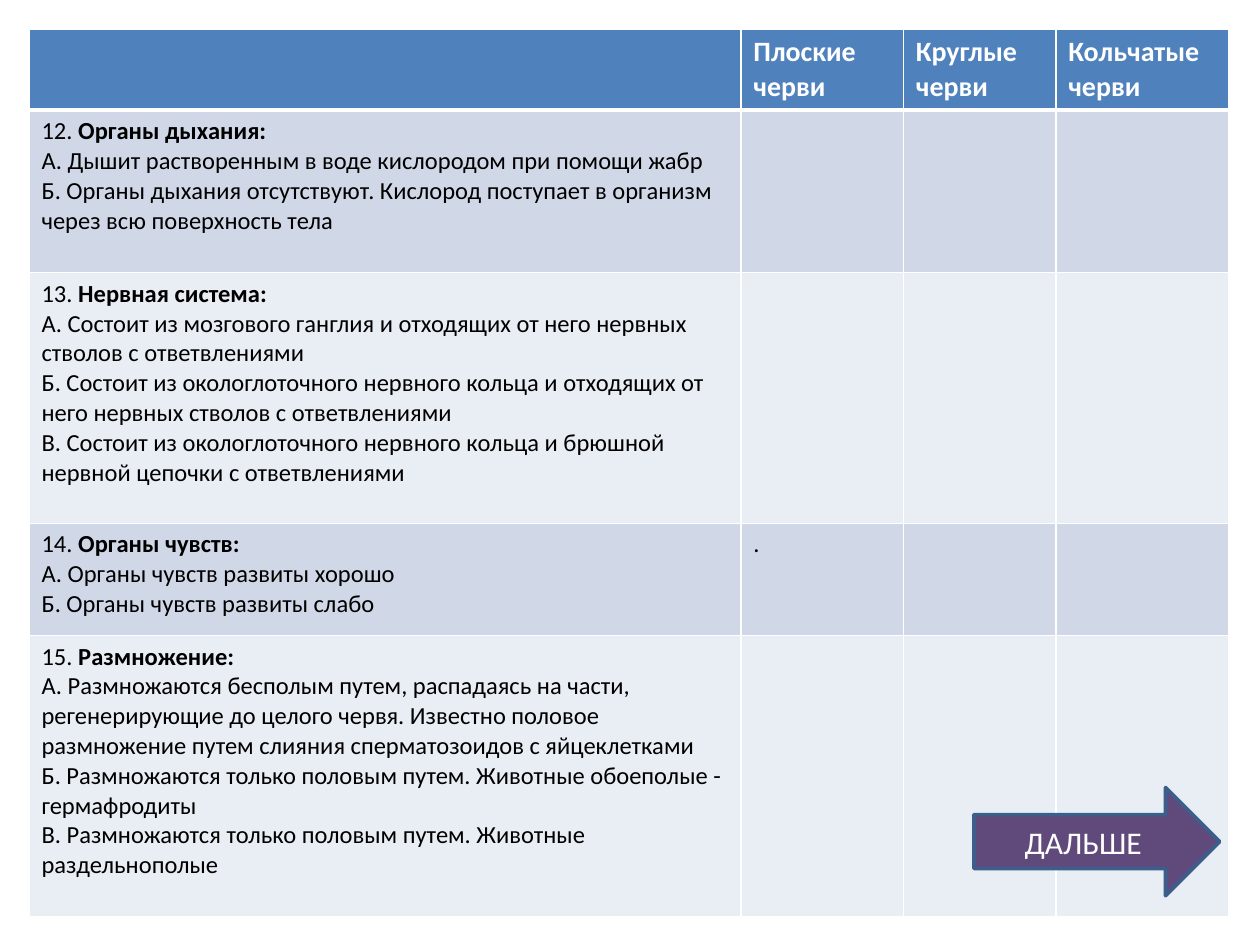
from lxml.etree import SubElement
from pptx import Presentation
from pptx.dml.color import RGBColor
from pptx.enum.shapes import MSO_SHAPE
from pptx.enum.text import MSO_ANCHOR, PP_ALIGN
from pptx.oxml.ns import qn
from pptx.util import Inches, Pt

WIDTHS = [5.65, 1.29, 1.21, 1.37]
HEADS = ["", "Плоские", "Круглые", "Кольчатые"]
TOPICS = [
    (1.29, "12.", " Органы дыхания:", [
        "А. Дышит растворенным в воде кислородом при помощи жабр",
        "Б. Органы дыхания отсутствуют. Кислород поступает в организм через всю поверхность тела",
    ]),
    (1.99, "13.", " Нервная система:", [
        "А. Состоит из мозгового ганглия и отходящих от него нервных стволов с ответвлениями",
        "Б. Состоит из окологлоточного нервного кольца и отходящих от него нервных стволов с ответвлениями",
        "В. Состоит из окологлоточного нервного кольца и брюшной нервной цепочки с ответвлениями",
    ]),
    (0.89, "14.", " Органы чувств:", [
        "А. Органы чувств развиты хорошо",
        "Б. Органы чувств развиты слабо",
    ]),
    (2.23, "15.", " Размножение:", [
        "А. Размножаются бесполым путем, распадаясь на части, регенерирующие до целого червя. Известно половое размножение путем слияния сперматозоидов с яйцеклетками",
        "Б. Размножаются только половым путем. Животные обоеполые - гермафродиты",
        "В. Размножаются только половым путем. Животные раздельнополые",
    ]),
]


def paint(fill, color):
    fill.solid()
    fill.fore_color.rgb = RGBColor.from_string(color)


def write(frame, lines, size, color):
    for i, line in enumerate(lines):
        para = frame.paragraphs[0] if i == 0 else frame.add_paragraph()
        for text, bold in line:
            run = para.add_run()
            run.text = text
            font = run.font
            font.name, font.size, font.bold = "Calibri", Pt(size), bold
            font.color.rgb = RGBColor.from_string(color)


def border(cell, bottom):
    props = cell._tc.get_or_add_tcPr()
    for side, width in (("L", 1), ("R", 1), ("T", 1), ("B", bottom)):
        line = SubElement(props, qn("a:ln" + side), w=str(Pt(width)))
        solid = SubElement(line, qn("a:solidFill"))
        SubElement(solid, qn("a:srgbClr"), val="FFFFFF")


def style(cell, color, bottom=1):
    border(cell, bottom)
    paint(cell.fill, color)


def add_grid(slide):
    heights = [0.63] + [topic[0] for topic in TOPICS]
    frame = slide.shapes.add_table(
        len(heights), len(WIDTHS), Inches(0.23), Inches(0.23),
        Inches(sum(WIDTHS)), Inches(sum(heights)))
    table = frame.table
    table.first_row = table.horz_banding = False
    for col, width in zip(table.columns, WIDTHS):
        col.width = Inches(width)
    for row, height in zip(table.rows, heights):
        row.height = Inches(height)

    for cell, head in zip(table.rows[0].cells, HEADS):
        style(cell, "4F81BD", 3)
        if head:
            write(cell.text_frame, [[(head, True)], [("черви", True)]], 16, "FFFFFF")

    for i, (_, number, title, answers) in enumerate(TOPICS, 1):
        for cell in table.rows[i].cells:
            style(cell, "D0D8E8" if i % 2 else "E9EDF4")
        lines = [[(number, False), (title, True)]]
        lines += [[(answer, False)] for answer in answers]
        write(table.cell(i, 0).text_frame, lines, 14, "000000")
    write(table.cell(3, 1).text_frame, [[(".", False)]], 14, "000000")


def add_arrow(slide):
    arrow = slide.shapes.add_shape(
        MSO_SHAPE.RIGHT_ARROW, Inches(7.73), Inches(6.25), Inches(1.95), Inches(0.86))
    arrow.shadow.inherit = False
    paint(arrow.fill, "604A7B")
    paint(arrow.line.fill, "3A5F8C")
    arrow.line.width = Pt(2)
    frame = arrow.text_frame
    frame.vertical_anchor = MSO_ANCHOR.MIDDLE
    write(frame, [[("ДАЛЬШЕ", False)]], 18, "FFFFFF")
    frame.paragraphs[0].alignment = PP_ALIGN.CENTER


def main():
    deck = Presentation()
    deck.slide_width, deck.slide_height = Inches(10), Inches(7.5)
    slide = deck.slides.add_slide(deck.slide_layouts[6])
    add_grid(slide)
    add_arrow(slide)
    deck.save("out.pptx")


if __name__ == "__main__":
    main()
